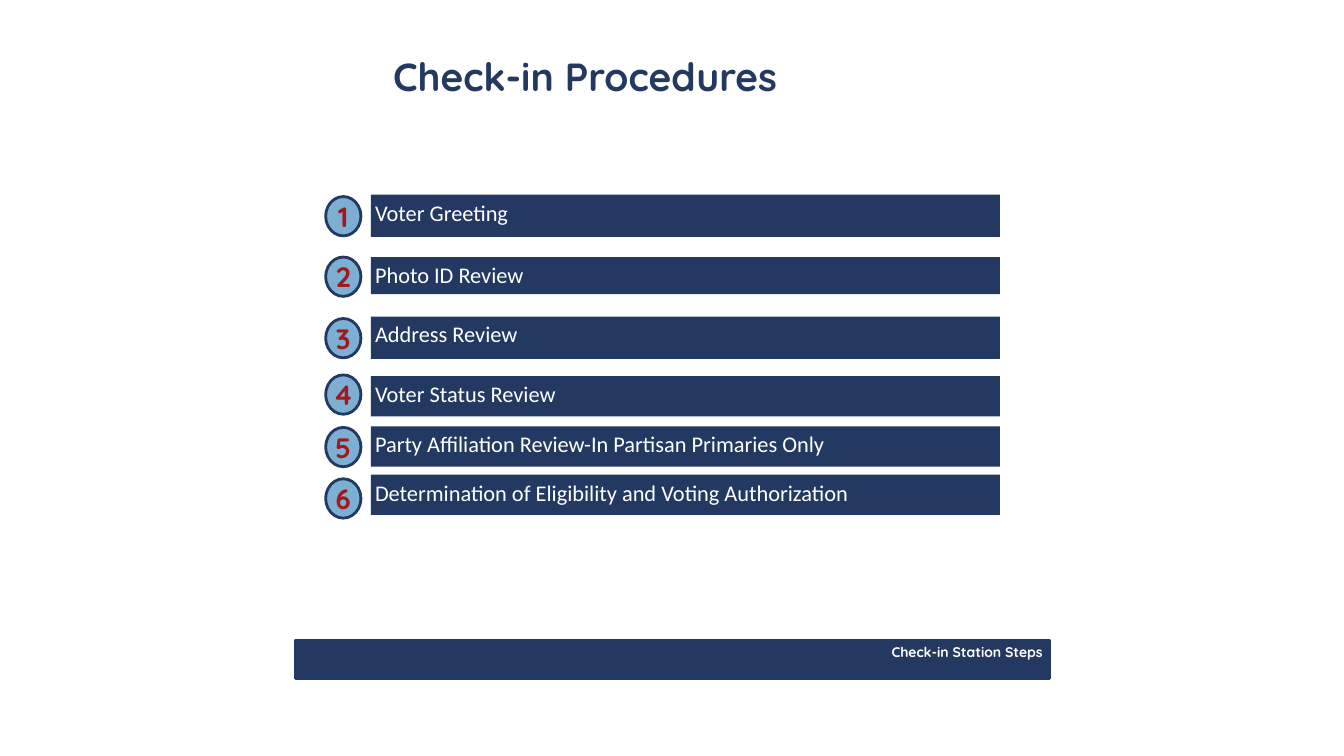
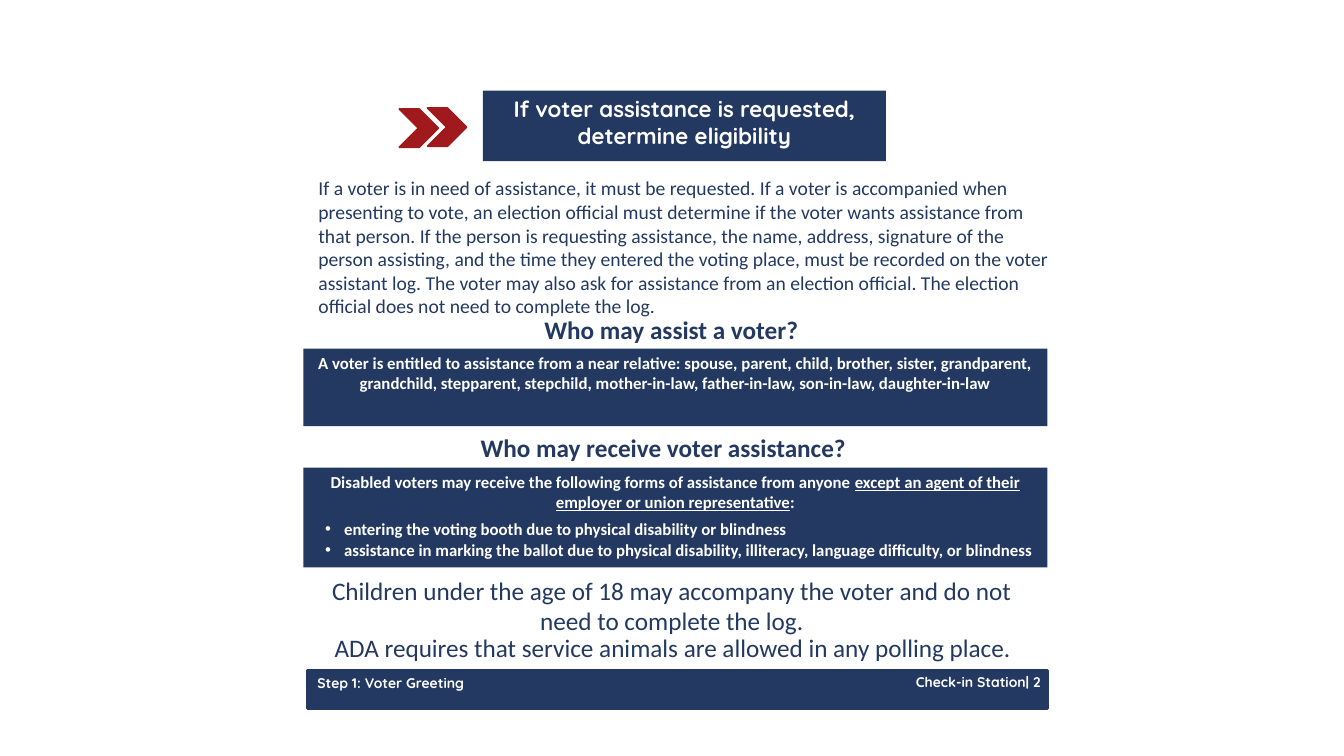
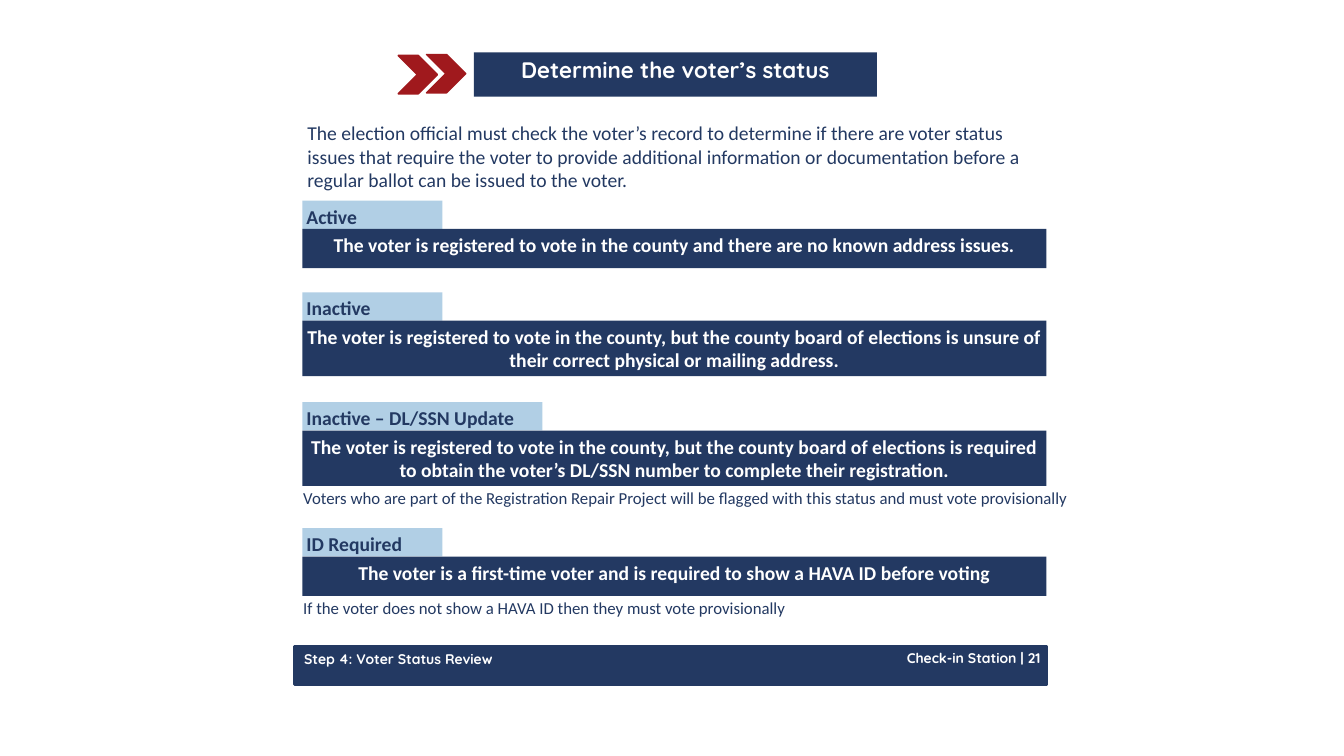
import pptx
import pptx.util
import pptx.dml.color
import pptx.enum.shapes
import pptx.enum.text
import pptx.oxml.ns
import lxml.etree

Pt = pptx.util.Pt
Shape = pptx.enum.shapes.MSO_SHAPE
Align = pptx.enum.text.PP_ALIGN
Anchor = pptx.enum.text.MSO_ANCHOR
qn = pptx.oxml.ns.qn

THEME = {
    "navy": "233962", "blue": "7DAFD3", "pale": "B1CFE5", "red": "A0191D", "white": "FFFFFF",
    "page": (960, 540),
    "title": {"name": "Quicksand", "size": 28, "bold": True, "color": "navy"},
    "banner": {"name": "Quicksand", "size": 16, "bold": True, "color": "white"},
    "footer": {"name": "Quicksand", "size": 10, "bold": True, "color": "white"},
    "number": {"name": "Quicksand", "size": 20, "bold": True, "color": "red"},
    "step": {"name": "Calibri", "size": 16, "bold": False, "color": "white"},
    "intro": {"name": "Calibri", "size": 14, "bold": False, "color": "navy"},
    "heading": {"name": "Calibri", "size": 18, "bold": True, "color": "navy"},
    "closing": {"name": "Calibri", "size": 18, "bold": False, "color": "navy"},
    "rule": {"name": "Calibri", "size": 12, "bold": True, "color": "white"},
    "note": {"name": "Calibri", "size": 12, "bold": False, "color": "navy"},
    "status": {"name": "Calibri", "size": 14, "bold": True, "color": "white"},
    "tab": {"name": "Calibri", "size": 14, "bold": True, "color": "navy"},
}
TIGHT = (2.88, 2.88)
ROOMY = (7.2, 3.6)

STEPS = [
    ("Voter Greeting", 139, 30.2, 140.4),
    ("Photo ID Review", 183.6, 26.6, 183.6),
    ("Address Review", 226.1, 30.2, 227.5),
    ("Voter Status Review", 268.6, 28.8, 267.8),
    ("Party Affiliation Review-In Partisan Primaries Only", 304.6, 28.8, 305.3),
    ("Determination of Eligibility and Voting Authorization", 339.1, 28.8, 342),
]
ASSISTANCE = (
    "If a voter is in need of assistance, it must be requested. If a voter is accompanied when "
    "presenting to vote, an election official must determine if the voter wants assistance from "
    "that person. If the person is requesting assistance, the name, address, signature of the "
    "person assisting, and the time they entered the voting place, must be recorded on the voter "
    "assistant log. The voter may also ask for assistance from an election official. The election "
    "official does not need to complete the log."
)
RELATIVES = (
    "A voter is entitled to assistance from a near relative: spouse, parent, child, brother, "
    "sister, grandparent, grandchild, stepparent, stepchild, mother-in-law, father-in-law, "
    "son-in-law, daughter-in-law"
)
DISABLED = [
    ("Disabled voters may receive the following forms of assistance from anyone ", False),
    ("except an agent of their employer or union representative", True),
    (":", False),
]
FORMS = [
    "entering the voting booth due to physical disability or blindness",
    "assistance in marking the ballot due to physical disability, illiteracy, "
    "language difficulty, or blindness",
]
CENTERED_LINES = [
    ("Who may assist a voter?", "heading", (339.1, 221, 280.8, 28.8)),
    ("Who may receive voter assistance?", "heading", (333.4, 305.3, 280.8, 28.8)),
    ("Children under the age of 18 may accompany the voter and do not need to complete the log.",
     "closing", (216, 407.5, 527.8, 51.1)),
    ("ADA requires that service animals are allowed in any polling place.",
     "closing", (216.7, 447.8, 527.8, 28.8)),
]
STATUS_INTRO = (
    "The election official must check the voter’s record to determine if there are voter status "
    "issues that require the voter to provide additional information or documentation before a "
    "regular ballot can be issued to the voter."
)
STATUSES = [
    ("Active", 143.3, 100, 28.1,
     "The voter is registered to vote in the county and there are no known address issues.", ""),
    ("Inactive", 208.8, 100, 39.6,
     "The voter is registered to vote in the county, but the county board of elections is unsure "
     "of their correct physical or mailing address.", ""),
    ("Inactive – DL/SSN Update", 287.3, 171.4, 39.6,
     "The voter is registered to vote in the county, but the county board of elections is "
     "required to obtain the voter’s DL/SSN number to complete their registration.",
     "Voters who are part of the Registration Repair Project will be flagged with this status "
     "and must vote provisionally"),
    ("ID Required", 377.3, 100, 28.1,
     "The voter is a first-time voter and is required to show a HAVA ID before voting",
     "If the voter does not show a HAVA ID then they must vote provisionally"),
]
TAB_HEIGHT = 20.2


def rgb(name):
    return pptx.dml.color.RGBColor.from_string(THEME[name])


def assign(target, values):
    for key, value in values.items():
        setattr(target, key, value)


def move(shape, box):
    assign(shape, dict(zip(("left", "top", "width", "height"), map(Pt, box))))


def add_run(para, text, style, underline=None):
    span = para.add_run()
    span.text = text
    look = THEME[style]
    assign(span.font, {"name": look["name"], "size": Pt(look["size"]),
                       "bold": look["bold"], "underline": underline})
    span.font.color.rgb = rgb(look["color"])


def prepare(shape, inset=TIGHT, anchor=Anchor.TOP, wrap=True):
    side, edge = map(Pt, inset)
    frame = shape.text_frame
    assign(frame, {"word_wrap": wrap, "vertical_anchor": anchor,
                   "auto_size": pptx.enum.text.MSO_AUTO_SIZE.NONE,
                   "margin_left": side, "margin_right": side,
                   "margin_top": edge, "margin_bottom": edge})
    return frame


def write(shape, text, style, align=Align.LEFT, **layout):
    para = prepare(shape, **layout).paragraphs[0]
    para.alignment = align
    add_run(para, text, style)


def add_text(page, box, text, style, align=Align.LEFT, inset=TIGHT):
    write(page.shapes.add_textbox(*map(Pt, box)), text, style, align, inset=inset)


def add_block(page, box, fill="navy", kind=Shape.RECTANGLE, line=None, weight=2):
    shape = page.shapes.add_shape(kind, *map(Pt, box))
    shape.shadow.inherit = False
    shape.fill.solid()
    shape.fill.fore_color.rgb = rgb(fill)
    if line:
        shape.line.color.rgb = rgb(line)
        shape.line.width = Pt(weight)
    else:
        shape.line.fill.background()
    return shape


def add_footer(page, box, right, left=""):
    x, y, width, height = box
    add_block(page, box, line="navy")
    add_text(page, (x + 90, y - 0.7, width - 92, height), right, "footer", Align.RIGHT)
    if left:
        add_text(page, (x, y - 0.7, 250, 19.4), left, "footer", inset=ROOMY)


def add_banner(page, box, text, chevron_x, chevron_y):
    title = page.shapes.title
    move(title, box)
    title.fill.solid()
    title.fill.fore_color.rgb = rgb("navy")
    write(title, text, "banner", Align.CENTER)
    for step in range(2):
        place = (chevron_x + 20.2 * step, chevron_y - 0.7 * step, 28.1, 27.4)
        add_block(page, place, "red", Shape.CHEVRON, "red", 1)


def set_bullet(para, symbol, margin, indent):
    props = para._p.get_or_add_pPr()
    props.set("marL", str(Pt(margin)))
    props.set("indent", str(Pt(indent)))
    if symbol:
        lxml.etree.SubElement(props, qn("a:buChar")).set("char", symbol)
    else:
        lxml.etree.SubElement(props, qn("a:buNone"))


def build_steps(deck):
    page = deck.slides.add_slide(deck.slide_layouts[5])
    move(page.shapes.title, (277.9, 34.6, 447.1, 36))
    write(page.shapes.title, "Check-in Procedures", "title")
    for number, (text, top, height, circle_top) in enumerate(STEPS, 1):
        write(add_block(page, (265, top, 449.3, height)), text, "step")
        circle = add_block(page, (232.6, circle_top, 25.2, 28.1), "blue",
                           Shape.FLOWCHART_CONNECTOR, "navy")
        write(circle, str(number), "number", Align.CENTER,
              inset=(0, 0), anchor=Anchor.MIDDLE, wrap=False)
    add_footer(page, (211, 457.2, 538.6, 27.4), "Check-in Station Steps")


def build_assistance(deck):
    page = deck.slides.add_slide(deck.slide_layouts[1])
    add_banner(page, (344.9, 64.8, 288, 50.4),
               "If voter assistance is requested, determine eligibility", 285.1, 77.8)
    add_text(page, (224.6, 123.1, 528.5, 100), ASSISTANCE, "intro")
    write(add_block(page, (216.7, 249.1, 531.4, 55.4)), RELATIVES, "rule", Align.CENTER)
    for text, style, box in CENTERED_LINES:
        add_text(page, box, text, style, Align.CENTER, ROOMY)

    body = page.placeholders[1]
    move(body, (216.7, 334.1, 531.4, 71.3))
    body.fill.solid()
    body.fill.fore_color.rgb = rgb("navy")
    frame = prepare(body)
    lead = frame.paragraphs[0]
    assign(lead, {"alignment": Align.CENTER, "space_before": Pt(0)})
    set_bullet(lead, "", 0, 0)
    for text, underline in DISABLED:
        add_run(lead, text, "rule", underline)
    for index, text in enumerate(FORMS):
        para = frame.add_paragraph()
        assign(para, {"alignment": Align.LEFT, "space_before": Pt(0 if index else 5)})
        set_bullet(para, "•", 26.2, -13.5)
        add_run(para, text, "rule")
    add_footer(page, (219.6, 478.8, 528.5, 27.4), "Check-in Station| 2", "Step 1: Voter Greeting")


def build_status(deck):
    page = deck.slides.add_slide(deck.slide_layouts[5])
    add_banner(page, (338.4, 37.4, 288, 31.7), "Determine the voter’s status", 284.4, 39.6)
    add_text(page, (216.7, 83.5, 527.8, 55.4), STATUS_INTRO, "intro")
    for label, top, tab_width, height, text, note in STATUSES:
        bar_top = top + TAB_HEIGHT
        write(add_block(page, (216, top, tab_width, TAB_HEIGHT), "pale"), label, "tab")
        write(add_block(page, (216, bar_top, 531.4, height)), text, "status", Align.CENTER)
        if note:
            add_text(page, (209.5, bar_top + height - 2, 575.3, 21.6), note, "note", inset=ROOMY)
    add_footer(page, (210.2, 461.5, 537.8, 27.4), "Check-in Station | 21",
               "Step 4: Voter Status Review")


def main():
    deck = pptx.Presentation()
    deck.slide_width, deck.slide_height = map(Pt, THEME["page"])
    for build in (build_steps, build_assistance, build_status):
        build(deck)
    deck.save("out.pptx")


if __name__ == "__main__":
    main()
